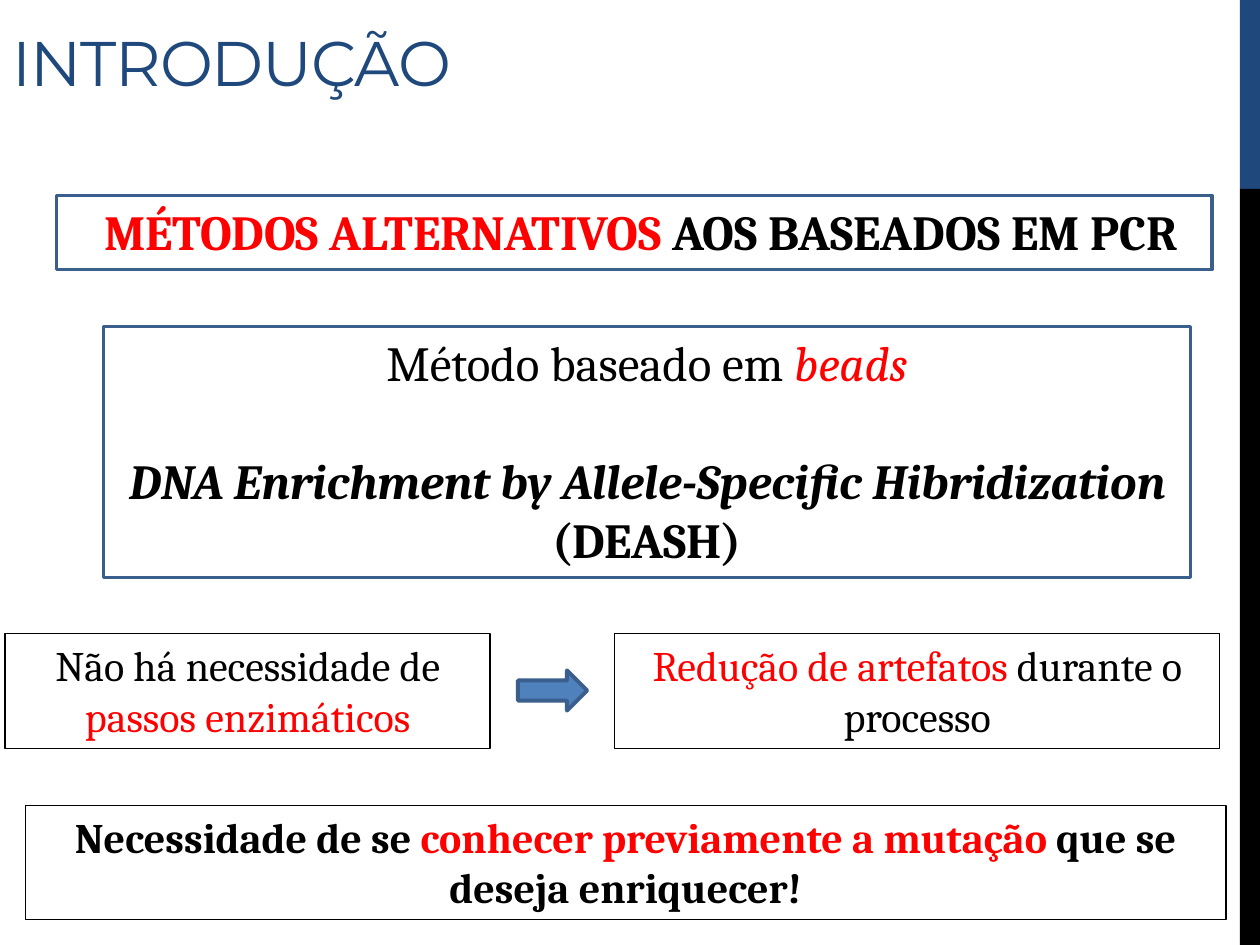
"""Build the introduction slide on alternatives to PCR-based methods."""
import pptx
import pptx.util
import pptx.dml.color
import pptx.enum.shapes
import pptx.enum.text

Pt = pptx.util.Pt
KIND = pptx.enum.shapes.MSO_SHAPE
ALIGN = pptx.enum.text.PP_ALIGN
ANCHOR = pptx.enum.text.MSO_ANCHOR

THEME = {
    "navy": "1F497D", "edge": "3A5F8C", "blue": "4F81BD",
    "red": "FF0000", "black": "000000",
    "serif": "Cambria", "sans": "Montserrat",
    "title": 36, "large": 28, "body": 24, "gap": 33.7,
}

TITLE = ("INTRODUÇÃO", (0, 7.92, 705.6, 52.56))
BARS = [("navy", (708.48, 0, 11.52, 108)), ("black", (708.48, 108, 11.52, 432))]
ARROW = (295.92, 383.04, 39.6, 23.04)

# PLACEHOLDER
BOXES = [
    {"at": (32.4, 111.6, 660.24, 42.48), "line": ("edge", 1.75), "size": "large", "indent": 7.2,
     "text": [[("MÉTODOS ALTERNATIVOS ", "red", "b"), ("AOS BASEADOS EM PCR", "black", "b")]]},
    {"at": (59.04, 186.48, 621.36, 143.28), "line": ("edge", 1.75), "size": "large",
     "text": [[("Método baseado em ", "black", ""), ("beads", "red", "i")],
              [("DNA Enrichment by Allele-Specific Hibridization ", "black", "bi"),
               ("(DEASH)", "black", "b")]]},
    {"at": (2.88, 362.16, 277.2, 65.52), "line": ("black", 0.75), "size": "body",
     "text": [[("Não há necessidade de ", "black", ""), ("passos enzimáticos", "red", "")]]},
    {"at": (351.36, 362.16, 345.6, 65.52), "line": ("black", 0.75), "size": "body",
     "text": [[("Redução de artefatos ", "red", ""), ("durante o processo", "black", "")]]},
    {"at": (14.4, 460.08, 686.16, 65.52), "line": ("black", 0.75), "size": "body",
     "text": [[("Necessidade de se ", "black", "b"), ("conhecer previamente a mutação ", "red", "b"),
               ("que se deseja enriquecer!", "black", "b")]]},
]


def tint(name):
    return pptx.dml.color.RGBColor.from_string(THEME[name])


def draw(slide, kind, at, fill=None, line=None):
    shape = slide.shapes.add_shape(kind, *map(Pt, at))
    shape.shadow.inherit = False
    if fill:
        shape.fill.solid()
        shape.fill.fore_color.rgb = tint(fill)
    else:
        shape.fill.background()
    if line:
        shape.line.color.rgb = tint(line[0])
        shape.line.width = Pt(line[1])
    else:
        shape.line.fill.background()
    return shape


def style(run, face, size, color, marks=""):
    run.font.name = THEME[face]
    run.font.size = Pt(THEME[size])
    run.font.color.rgb = tint(color)
    run.font.bold = "b" in marks
    run.font.italic = "i" in marks


def write(frame, box):
    frame.word_wrap = True
    frame.vertical_anchor = ANCHOR.TOP
    for row, parts in enumerate(box["text"]):
        para = frame.add_paragraph() if row else frame.paragraphs[0]
        para.alignment = ALIGN.CENTER
        if row:
            para.space_before = Pt(THEME["gap"])
        if "indent" in box:
            para._p.get_or_add_pPr().set("marL", str(Pt(box["indent"])))
        for text, color, marks in parts:
            run = para.add_run()
            run.text = text
            style(run, "serif", box["size"], color, marks)


def head(slide, text, at):
    frame = slide.shapes.add_textbox(*map(Pt, at)).text_frame
    frame.word_wrap = True
    frame.vertical_anchor = ANCHOR.BOTTOM
    frame.text = text
    run = frame.paragraphs[0].runs[0]
    style(run, "sans", "title", "navy")
    run.font._element.set("spc", "-60")


def main():
    deck = pptx.Presentation()
    deck.slide_width, deck.slide_height = Pt(720), Pt(540)
    slide = deck.slides.add_slide(deck.slide_layouts[6])
    for color, at in BARS:
        draw(slide, KIND.RECTANGLE, at, color)
    head(slide, *TITLE)
    for box in BOXES:
        shape = draw(slide, KIND.RECTANGLE, box["at"], line=box["line"])
        write(shape.text_frame, box)
    draw(slide, KIND.RIGHT_ARROW, ARROW, "blue", ("edge", 2.25))
    deck.save("out.pptx")


if __name__ == "__main__":
    main()
